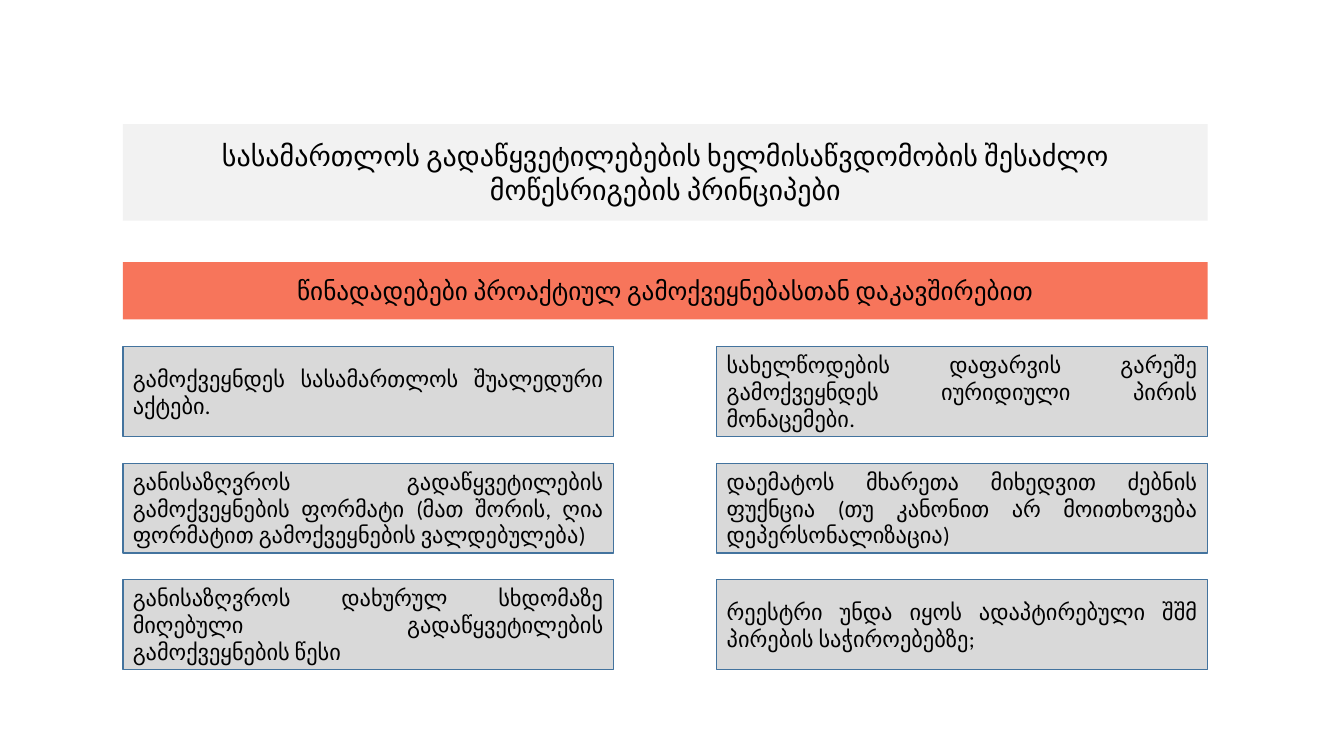
import pptx
import pptx.util
import pptx.dml.color
import pptx.enum.shapes
import pptx.enum.text

Pt = pptx.util.Pt
RGB = pptx.dml.color.RGBColor
Align = pptx.enum.text.PP_ALIGN

PALE = RGB(0xF2, 0xF2, 0xF2)
CORAL = RGB(0xF7, 0x75, 0x5B)
GRAY = RGB(0xD9, 0xD9, 0xD9)
BLUE = RGB(0x43, 0x73, 0x9E)
BLACK = RGB(0, 0, 0)

LEFT = 87.8
WIDTH = 774.8
CARD_TOP = 247.7
CARD_W = 350.6
CARD_H = 64.1
COL_STEP = WIDTH - CARD_W
ROW_STEP = 83.2

TITLE = "სასამართლოს გადაწყვეტილებების ხელმისაწვდომობის შესაძლო მოწესრიგების პრინციპები"
HEADING = "წინადადებები პროაქტიულ გამოქვეყნებასთან დაკავშირებით"
CARDS = [
    ("გამოქვეყნდეს სასამართლოს შუალედური აქტები.",
     "სახელწოდების დაფარვის გარეშე გამოქვეყნდეს იურიდიული პირის მონაცემები."),
    ("განისაზღვროს გადაწყვეტილების გამოქვეყნების ფორმატი (მათ შორის, ღია ფორმატით გამოქვეყნების ვალდებულება)",
     "დაემატოს მხარეთა მიხედვით ძებნის ფუქნცია (თუ კანონით არ მოითხოვება დეპერსონალიზაცია)"),
    ("განისაზღვროს დახურულ სხდომაზე მიღებული გადაწყვეტილების გამოქვეყნების წესი",
     "რეესტრი უნდა იყოს ადაპტირებული შშმ პირების საჭიროებებზე;"),
]


def add_box(slide, left, top, width, height, fill, text, size, align):
    box = slide.shapes.add_shape(
        pptx.enum.shapes.MSO_SHAPE.RECTANGLE,
        Pt(left), Pt(top), Pt(width), Pt(height))
    box.shadow.inherit = False
    box.fill.solid()
    box.fill.fore_color.rgb = fill
    box.line.fill.background()
    frame = box.text_frame
    frame.word_wrap = True
    frame.vertical_anchor = pptx.enum.text.MSO_ANCHOR.MIDDLE
    para = frame.paragraphs[0]
    para.text = text
    para.alignment = align
    para.font.name = "Calibri"
    para.font.size = Pt(size)
    para.font.color.rgb = BLACK
    return box


def add_banner(slide, top, height, fill, text, size):
    add_box(slide, LEFT, top, WIDTH, height, fill, text, size, Align.CENTER)


def add_card(slide, row, col, text):
    card = add_box(slide, LEFT + col * COL_STEP, CARD_TOP + row * ROW_STEP,
                   CARD_W, CARD_H, GRAY, text, 16, Align.JUSTIFY)
    card.line.color.rgb = BLUE
    card.line.width = Pt(1)


def main():
    deck = pptx.Presentation()
    deck.slide_width = Pt(960)
    deck.slide_height = Pt(540)
    slide = deck.slides.add_slide(deck.slide_layouts[6])
    add_banner(slide, 88.6, 69.1, PALE, TITLE, 20)
    add_banner(slide, 187.2, 41, CORAL, HEADING, 18)
    for row, pair in enumerate(CARDS):
        for col, text in enumerate(pair):
            add_card(slide, row, col, text)
    deck.save("out.pptx")


if __name__ == "__main__":
    main()
